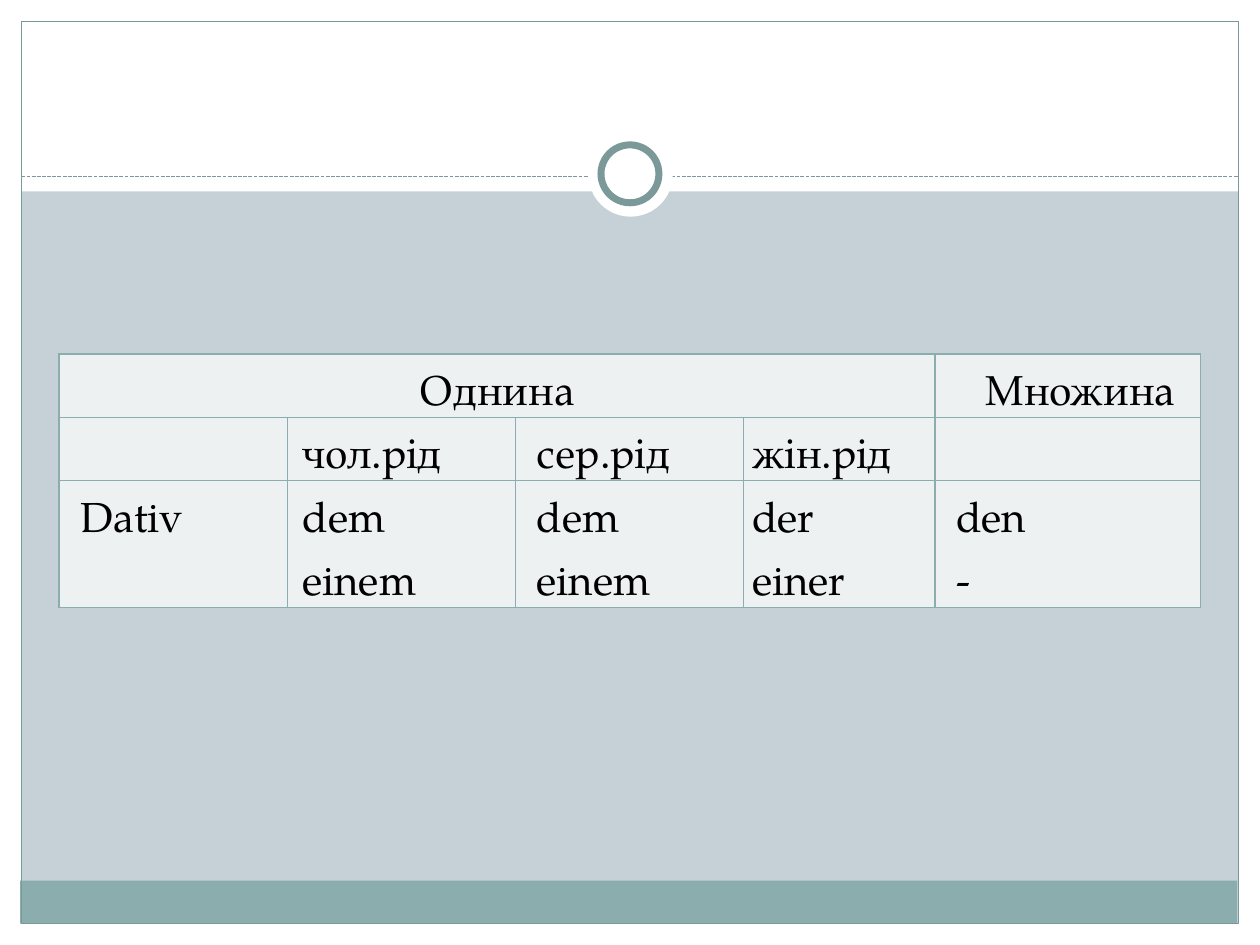
from dataclasses import dataclass

from lxml import etree
from pptx import Presentation
from pptx.dml.color import RGBColor
from pptx.enum.dml import MSO_LINE
from pptx.enum.shapes import MSO_CONNECTOR, MSO_SHAPE
from pptx.enum.text import PP_ALIGN
from pptx.oxml.ns import qn
from pptx.util import Inches, Pt

RECT, OVAL = MSO_SHAPE.RECTANGLE, MSO_SHAPE.OVAL
STRAIGHT, DASH = MSO_CONNECTOR.STRAIGHT, MSO_LINE.SQUARE_DOT
CENTER, JUSTIFY = PP_ALIGN.CENTER, PP_ALIGN.JUSTIFY


@dataclass(frozen=True)
class Theme:
    back: str = "C5D1D7"
    white: str = "FFFFFF"
    band: str = "8CADAE"
    frame: str = "7C999A"
    cell: str = "EEF1F2"
    text: str = "000000"
    font: str = "TeX Gyre Pagella"
    size: int = 24
    spacing: float = 1.5


theme = Theme()
rgb = RGBColor.from_string
prs = Presentation()
prs.slide_width, prs.slide_height = Inches(10), Inches(7.5)
s = prs.slides.add_slide(prs.slide_layouts[6])
s.background.fill.solid()
s.background.fill.fore_color.rgb = rgb(theme.back)


def add_shape(kind, box, fill=None, line=None, width=0.75):
    sp = s.shapes.add_shape(kind, *map(Inches, box))
    sp.shadow.inherit = False
    if fill:
        sp.fill.solid()
        sp.fill.fore_color.rgb = rgb(fill)
    else:
        sp.fill.background()
    if line:
        sp.line.color.rgb = rgb(line)
        sp.line.width = Pt(width)
    else:
        sp.line.fill.background()


def set_borders(cell, color, width):
    tcPr = cell._tc.get_or_add_tcPr()
    for i, side in enumerate(("lnL", "lnR", "lnT", "lnB")):
        ln = etree.Element(qn("a:" + side), w=str(Pt(width)))
        fill = etree.SubElement(ln, qn("a:solidFill"))
        etree.SubElement(fill, qn("a:srgbClr"), val=color)
        tcPr.insert(i, ln)


# White margins and header
for box in ((0, 7.33, 10, 0.17), (0, 0, 10, 1.52),
            (0, 0, 0.17, 7.5), (9.83, 0, 0.17, 7.5)):
    add_shape(RECT, box, theme.white)

# Footer band and frame
add_shape(RECT, (0.16, 6.99, 9.66, 0.34), theme.band)
add_shape(RECT, (0.17, 0.17, 9.66, 7.16), line=theme.frame)

# Dashed divider
divider = s.shapes.add_connector(
    STRAIGHT, Inches(0.17), Inches(1.4), Inches(9.83), Inches(1.4))
divider.line.color.rgb = rgb(theme.frame)
divider.line.width = Pt(0.75)
divider.line.dash_style = DASH
etree.SubElement(divider._element.spPr, qn("a:effectLst"))

# Ring on the divider
add_shape(OVAL, (4.67, 1.05, 0.67, 0.67), theme.white)
add_shape(OVAL, (4.77, 1.15, 0.46, 0.46), theme.white, theme.frame, 4)

# Declension table
col_widths = (1.81, 1.81, 1.81, 1.52, 2.11)
row_heights = (0.5, 0.5, 1)
col_indents = (0.1, 0.05, 0.1, 0, 0.1)
header_indents = (0, 0, 0, 0, 0.2)
rows = (
    ("Однина", "", "", "", "Множина"),
    ("", "чол.рід", "сер.рід", "жін.рід", ""),
    ("Dativ", "dem\neinem", "dem\neinem", "der\neiner", "den\n-"),
)
tbl = s.shapes.add_table(
    len(rows), len(col_widths), Inches(0.47), Inches(2.81),
    Inches(sum(col_widths)), Inches(sum(row_heights))).table
tbl.first_row = tbl.horz_banding = False
for col, width in zip(tbl.columns, col_widths):
    col.width = Inches(width)
for row, height in zip(tbl.rows, row_heights):
    row.height = Inches(height)
tbl.cell(0, 0).merge(tbl.cell(0, 3))

for i, row in enumerate(rows):
    indents = col_indents if i else header_indents
    for j, text in enumerate(row):
        cell = tbl.cell(i, j)
        cell.fill.solid()
        cell.fill.fore_color.rgb = rgb(theme.cell)
        set_borders(cell, theme.band, 1)
        if not text:
            continue
        cell.margin_left = cell.margin_right = Inches(0.07)
        cell.margin_top = cell.margin_bottom = 0
        tf = cell.text_frame
        for n, line in enumerate(text.split("\n")):
            p = tf.add_paragraph() if n else tf.paragraphs[0]
            p.alignment = JUSTIFY if i else CENTER
            p.line_spacing = theme.spacing
            p._p.get_or_add_pPr().set("marL", str(Inches(indents[j])))
            r = p.add_run()
            r.text = line
            r.font.name = theme.font
            r.font.size = Pt(theme.size)
            r.font.color.rgb = rgb(theme.text)

prs.save("out.pptx")
